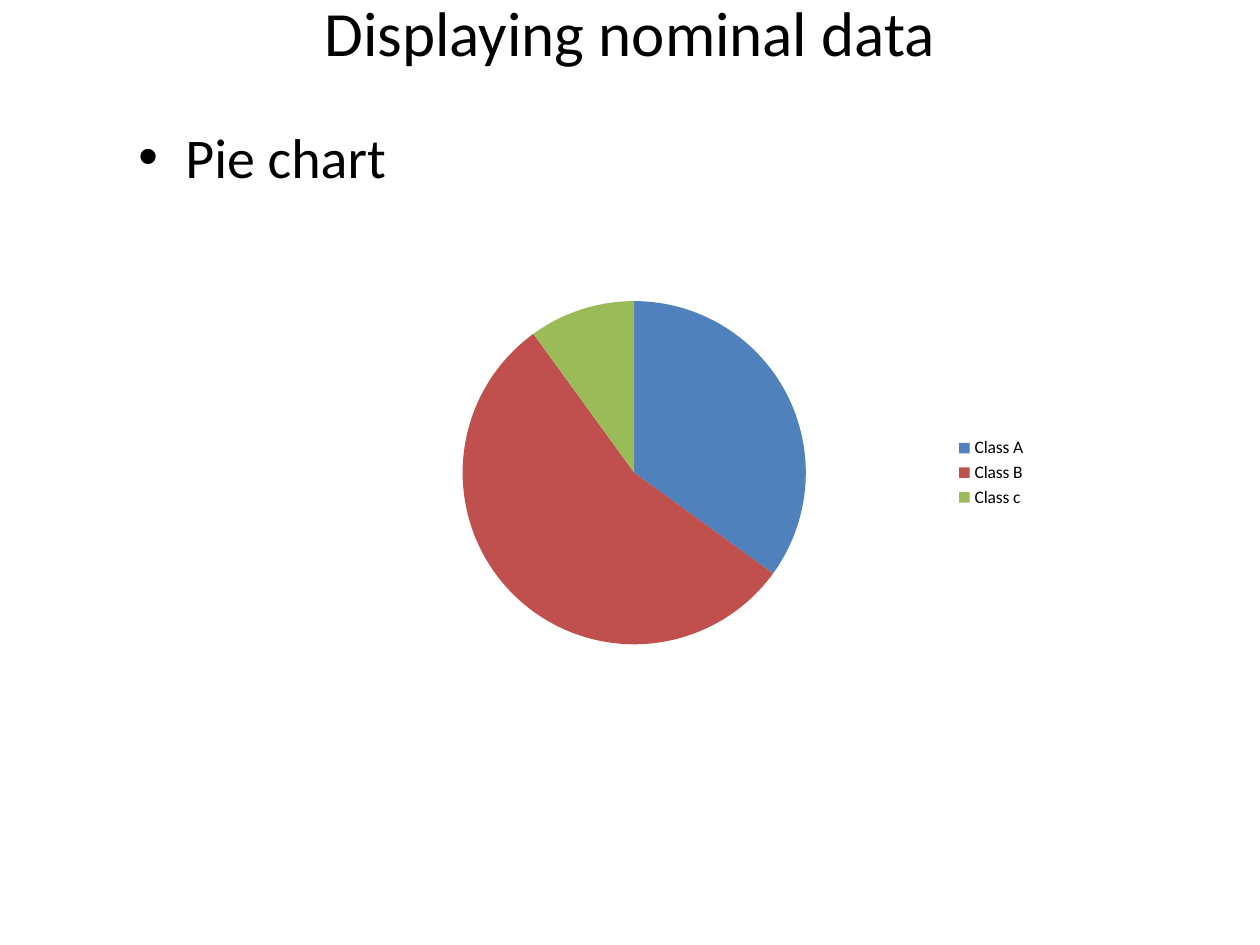
import pptx
import pptx.chart.data
import pptx.dml.color
import pptx.enum.chart
import pptx.enum.text
import pptx.util
from lxml import etree
from pptx.util import Cm

FONT = "Calibri"
COLORS = {"text": "000000", "Class A": "4F81BD", "Class B": "C0504D", "Class c": "9BBB59"}
SHARES = {"Class A": 35, "Class B": 55, "Class c": 10}


def rgb(name):
    """Return the named colour."""
    return pptx.dml.color.RGBColor.from_string(COLORS[name])


def style_font(font, size):
    """Set typeface, size and text colour."""
    font.name = FONT
    font.size = pptx.util.Pt(size)
    font.color.rgb = rgb("text")


def set_title(s, text):
    """Place and format the title placeholder."""
    sp = s.shapes.title
    sp.left, sp.top, sp.width, sp.height = Cm(1.27), Cm(0), Cm(22.86), Cm(1.27)
    tf = sp.text_frame
    tf.auto_size = pptx.enum.text.MSO_AUTO_SIZE.NONE
    tf.vertical_anchor = pptx.enum.text.MSO_ANCHOR.MIDDLE
    p = tf.paragraphs[0]
    p.alignment = pptx.enum.text.PP_ALIGN.CENTER
    r = p.add_run()
    r.text = text
    style_font(r.font, 36)


def add_bullet(s, text):
    """Add a text box with one bulleted line."""
    sp = s.shapes.add_textbox(Cm(2.54), Cm(2.34), Cm(20.12), Cm(13.34))
    tf = sp.text_frame
    tf.word_wrap = True
    p = tf.paragraphs[0]
    pPr = p._p.get_or_add_pPr()
    pPr.set("marL", str(Cm(0.95)))
    pPr.set("indent", str(-Cm(0.95)))
    ns = pptx.oxml.ns.qn
    etree.SubElement(pPr, ns("a:buFont")).set("typeface", "Arial")
    etree.SubElement(pPr, ns("a:buChar")).set("char", "•")
    r = p.add_run()
    r.text = text
    style_font(r.font, 32)


def add_pie(s, shares):
    """Add a pie chart with a legend on the right."""
    data = pptx.chart.data.CategoryChartData()
    data.categories = list(shares)
    data.add_series("Series 1", list(shares.values()))
    chart = s.shapes.add_chart(
        pptx.enum.chart.XL_CHART_TYPE.PIE,
        Cm(6.35), Cm(5.72), Cm(14.6), Cm(7.62), data,
    ).chart
    style_font(chart.font, 10)
    chart.has_title = False
    chart.has_legend = True
    chart.legend.position = pptx.enum.chart.XL_LEGEND_POSITION.RIGHT
    chart.legend.include_in_layout = False
    plot = chart.plots[0]
    plot.vary_by_categories = True
    for i, name in enumerate(shares):
        fill = plot.series[0].points[i].format.fill
        fill.solid()
        fill.fore_color.rgb = rgb(name)


def main():
    """Build and save the slide."""
    prs = pptx.Presentation()
    prs.slide_width, prs.slide_height = Cm(25.4), Cm(19.05)
    s = prs.slides.add_slide(prs.slide_layouts[5])
    set_title(s, "Displaying nominal data")
    add_bullet(s, "Pie chart")
    add_pie(s, SHARES)
    prs.save("out.pptx")


if __name__ == "__main__":
    main()
